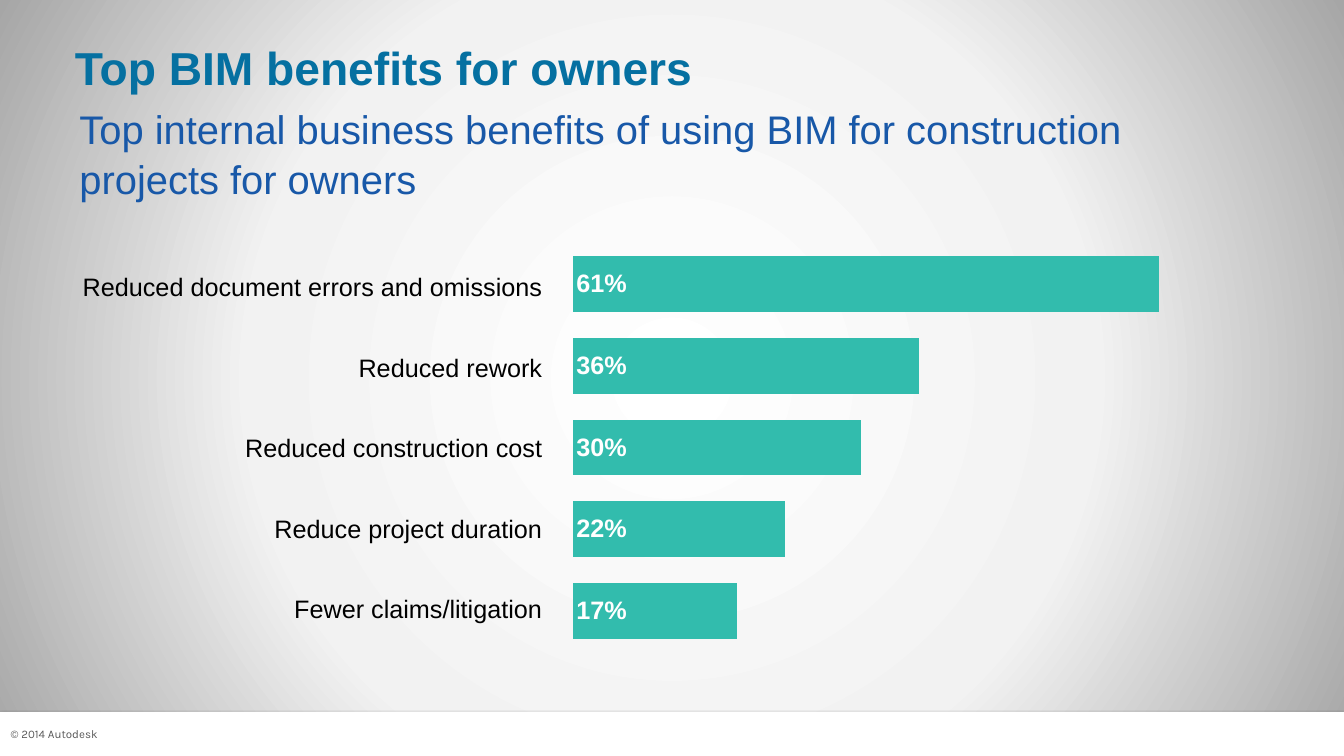
from pptx import Presentation
from pptx.chart.data import CategoryChartData
from pptx.dml.color import RGBColor
from pptx.enum.chart import XL_CHART_TYPE, XL_LABEL_POSITION
from pptx.enum.shapes import MSO_SHAPE
from pptx.enum.text import MSO_ANCHOR, PP_ALIGN
from pptx.oxml import parse_xml
from pptx.oxml.ns import nsdecls
from pptx.util import Inches, Pt

HUES = {
    "white": "FFFFFF", "pale": "F2F2F2", "edge": "A6A6A6", "black": "000000",
    "title": "0570A1", "lead": "1858A8", "bar": "32BCAD", "note": "595959",
}
ROWS = [
    ("Reduced document errors and omissions", 0.61, 6.75),
    ("Reduced rework", 0.36, 5.32),
    ("Reduced construction cost", 0.30, 5.32),
    ("Reduce project duration", 0.22, 5.79),
    ("Fewer claims/litigation", 0.17, 5.32),
]
RIGHT, TOP, PITCH = 7.17, 3.53, 1.065


class Deck:
    def __init__(self, slide, face="Arial", small="Karla"):
        self.slide, self.face, self.small = slide, face, small

    def hue(self, name):
        return RGBColor.from_string(HUES[name])

    def style(self, font, size, hue, bold=False, face=None):
        font.name, font.size, font.bold = face or self.face, Pt(size), bold
        font.color.rgb = self.hue(hue)

    def ground(self):
        self.slide._element.cSld.insert(0, parse_xml(
            f'<p:bg {nsdecls("p", "a")}><p:bgPr><a:gradFill rotWithShape="1"><a:gsLst>'
            f'<a:gs pos="0"><a:srgbClr val="{HUES["white"]}"/></a:gs>'
            f'<a:gs pos="55000"><a:srgbClr val="{HUES["pale"]}"/></a:gs>'
            f'<a:gs pos="100000"><a:srgbClr val="{HUES["edge"]}"><a:alpha val="56000"/></a:srgbClr></a:gs>'
            '</a:gsLst><a:path path="circle"><a:fillToRect l="50000" t="50000" r="50000" b="50000"/></a:path>'
            '</a:gradFill><a:effectLst/></p:bgPr></p:bg>'))

    def band(self, *box):
        band = self.slide.shapes.add_shape(MSO_SHAPE.RECTANGLE, *map(Inches, box))
        band.fill.solid()
        band.fill.fore_color.rgb = self.hue("white")
        band.line.fill.background()
        band._element.spPr.append(parse_xml(
            f'<a:effectLst {nsdecls("a")}><a:outerShdw blurRad="{Pt(3.1)}" dist="{Pt(1.8)}" '
            f'dir="5400000" rotWithShape="0"><a:srgbClr val="{HUES["black"]}">'
            '<a:alpha val="35000"/></a:srgbClr></a:outerShdw></a:effectLst>'))

    def put(self, shape, text, size, hue, pad=(0, 0), bold=False, face=None,
            anchor=MSO_ANCHOR.TOP, align=PP_ALIGN.LEFT, space=None):
        frame = shape.text_frame
        frame.word_wrap, frame.vertical_anchor = True, anchor
        frame.margin_left = frame.margin_right = Inches(pad[0])
        frame.margin_top = frame.margin_bottom = Inches(pad[1])
        par = frame.paragraphs[0]
        par.alignment, par.line_spacing = align, space
        run = par.add_run()
        run.text = text
        self.style(run.font, size, hue, bold, face)
        return par

    def title(self, box, text):
        shape = self.slide.shapes.title
        shape.left, shape.top, shape.width, shape.height = map(Inches, box)
        self.put(shape, text, 44, "title", (0.1, 0.05), True, space=1.1)

    def text(self, box, *args, **opts):
        return self.put(self.slide.shapes.add_textbox(*map(Inches, box)), *args, **opts)

    def label(self, box, text):
        par = self.text(box, text, 24, "black", anchor=MSO_ANCHOR.MIDDLE, align=PP_ALIGN.RIGHT)
        props = par._p.get_or_add_pPr()
        props.set("marL", str(Inches(0.13)))
        props.set("indent", str(Inches(-0.01)))

    def bars(self, box, rows):
        data = CategoryChartData(number_format="0%")
        data.categories = [row[0] for row in rows]
        data.add_series("Series 1", [row[1] for row in rows])
        chart = self.slide.shapes.add_chart(
            XL_CHART_TYPE.BAR_STACKED, *map(Inches, box), data).chart
        self.style(chart.font, 10, "black", face=self.small)
        chart.has_legend = chart.has_title = False
        for axis in (chart.category_axis, chart.value_axis):
            axis.visible = axis.has_major_gridlines = False
        chart.value_axis.minimum_scale, chart.value_axis.maximum_scale = 0, 0.7
        plot = chart.plots[0]
        plot.gap_width, plot.overlap, plot.vary_by_categories = 46, 100, False
        series = plot.series[0]
        series.format.fill.solid()
        series.format.fill.fore_color.rgb = self.hue("bar")
        tags = series.data_labels
        tags.show_value, tags.position = True, XL_LABEL_POSITION.INSIDE_BASE
        tags.number_format, tags.number_format_is_linked = "0%", False
        self.style(tags.font, 24, "white", True)
        area = chart._chartSpace.chart.plotArea
        for old in area.findall("{*}layout"):
            area.remove(old)
        area.insert(0, parse_xml(
            f'<c:layout {nsdecls("c")}><c:manualLayout><c:layoutTarget val="inner"/>'
            '<c:xMode val="edge"/><c:yMode val="edge"/><c:x val="0.02"/><c:y val="0.02"/>'
            '<c:w val="0.96"/><c:h val="0.96"/></c:manualLayout></c:layout>'))


def main():
    show = Presentation()
    show.slide_width, show.slide_height = Inches(17.78), Inches(10)
    deck = Deck(show.slides.add_slide(show.slide_layouts[5]))
    deck.ground()
    deck.band(0, 9.42, 17.78, 0.58)
    deck.text((0.14, 9.62, 1.42, 0.19), "© 2014 Autodesk", 11, "note", face=deck.small)
    deck.title((0.89, 0.4, 16, 1.67), "Top BIM benefits for owners")
    deck.bars((7.4, 3.11, 9.26, 5.62), ROWS[::-1])
    for i, (name, _, width) in enumerate(ROWS):
        deck.label((RIGHT - width, TOP + i * PITCH, width, 0.52), name)
    deck.text((0.89, 1.27, 15.98, 1.44),
              "Top internal business benefits of using BIM for construction projects for owners",
              38, "lead", pad=(0.16, 0.08), space=1.05)
    show.save("out.pptx")


if __name__ == "__main__":
    main()
